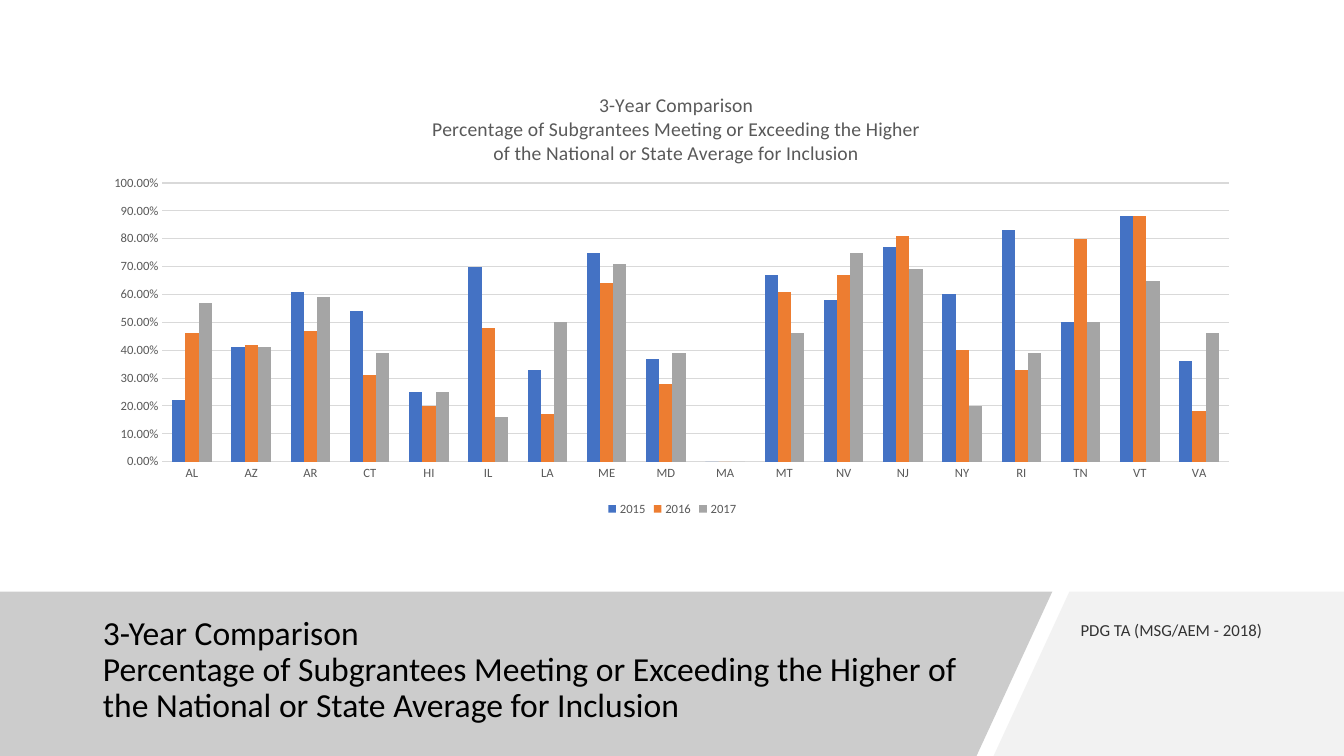
from pptx import Presentation
from pptx import util as u
from pptx.chart.data import CategoryChartData
from pptx.dml.color import RGBColor
from pptx.enum import chart as charts, text
from pptx.oxml import parse_xml
from pptx.oxml.ns import nsdecls, qn

STATES = "AL AZ AR CT HI IL LA ME MD MA MT NV NJ NY RI TN VT VA".split()
YEARS = {
    "2015": ("4472C4", [.22, .41, .61, .54, .25, .7, .33, .75, .37, 0,
                        .67, .58, .77, .6, .83, .5, .88, .36]),
    "2016": ("ED7D31", [.46, .42, .47, .31, .2, .48, .17, .64, .28, 0,
                        .61, .67, .81, .4, .33, .8, .88, .18]),
    "2017": ("A5A5A5", [.57, .41, .59, .39, .25, .16, .5, .71, .39, 0,
                        .46, .75, .69, .2, .39, .5, .65, .46]),
}
CHART_TITLE = ["3-Year Comparison",
               "Percentage of Subgrantees Meeting or Exceeding the Higher",
               "of the National or State Average for Inclusion"]


def color(value):
    return RGBColor.from_string(value)


def place(element, before, inner=False, **fractions):
    """Give a chart part a manual layout, as fractions of the chart."""
    for old in element.findall(qn("c:layout")):
        element.remove(old)
    target = '<c:layoutTarget val="inner"/>' if inner else ""
    modes = "".join(f'<c:{key}Mode val="edge"/>' for key in "xy")
    sizes = "".join(f'<c:{key} val="{val}"/>' for key, val in fractions.items())
    element.insert(before, parse_xml(
        f'<c:layout {nsdecls("c")}><c:manualLayout>{target}{modes}{sizes}'
        '</c:manualLayout></c:layout>'))


class Slide:
    font = "Calibri"
    gray = "595959"

    def __init__(self, deck):
        self.page = deck.slides.add_slide(deck.slide_layouts[5])

    def style(self, font, size, value):
        font.name, font.size, font.bold = self.font, u.Pt(size), False
        font.color.rgb = color(value)

    def fill_text(self, frame, words, size=12, value="000000", align="LEFT",
                  spacing=1.0, after=0):
        frame.word_wrap = True
        frame.auto_size = text.MSO_AUTO_SIZE.NONE
        frame.vertical_anchor = text.MSO_ANCHOR.MIDDLE
        para = frame.paragraphs[0]
        para.alignment = getattr(text.PP_ALIGN, align)
        para.line_spacing, para.space_after = spacing, u.Pt(after)
        for number, line in enumerate(words.split("\n")):
            if number:
                para.add_line_break()
            span = para.add_run()
            span.text = line
            self.style(span.font, size, value)

    def title(self, words, left, top, width, height, **look):
        box = self.page.shapes.title
        box.left, box.top = u.Cm(left), u.Cm(top)
        box.width, box.height = u.Cm(width), u.Cm(height)
        self.fill_text(box.text_frame, words, **look)
        # Bring the title in front of the panels
        self.page.shapes._spTree.append(box._element)

    def label(self, words, left, top, width, height, **look):
        box = self.page.shapes.add_textbox(*map(u.Cm, (left, top, width, height)))
        self.fill_text(box.text_frame, words, **look)

    def polygon(self, points, fill, opacity=100):
        corners = [(u.Cm(x), u.Cm(y)) for x, y in points]
        builder = self.page.shapes.build_freeform(*corners[0])
        builder.add_line_segments(corners[1:], close=True)
        shape = builder.convert_to_shape()
        shape.shadow.inherit = False
        shape.line.fill.background()
        shape.fill.solid()
        shape.fill.fore_color.rgb = color(fill)
        if opacity < 100:
            tint = shape._element.spPr.find(".//" + qn("a:srgbClr"))
            tint.append(parse_xml(
                f'<a:alpha {nsdecls("a")} val="{opacity * 1000}"/>'))

    def columns(self, heading, categories, series, left, top, width, height):
        data = CategoryChartData(number_format="0.00%")
        data.categories = categories
        for name, (_, values) in series.items():
            data.add_series(name, values)
        chart = self.page.shapes.add_chart(
            charts.XL_CHART_TYPE.COLUMN_CLUSTERED,
            *map(u.Cm, (left, top, width, height)), data).chart
        self.style(chart.font, 10, "000000")

        # Columns
        plot = chart.plots[0]
        plot.gap_width, plot.overlap, plot.vary_by_categories = 150, 0, False
        for bars, (fill, _) in zip(plot.series, series.values()):
            bars.format.fill.solid()
            bars.format.fill.fore_color.rgb = color(fill)

        # Axes and gridlines
        for axis in (chart.category_axis, chart.value_axis):
            axis.major_tick_mark = charts.XL_TICK_MARK.NONE
            axis.format.line.fill.background()
            self.style(axis.tick_labels.font, 9, self.gray)
        scale = chart.value_axis
        scale.minimum_scale, scale.maximum_scale, scale.major_unit = 0, 1, .1
        scale.tick_labels.number_format = "0.00%"
        scale.tick_labels.number_format_is_linked = False
        scale.major_gridlines.format.line.color.rgb = color("D9D9D9")
        scale.major_gridlines.format.line.width = u.Pt(.75)

        # Legend and heading
        chart.has_legend = True
        chart.legend.position = charts.XL_LEGEND_POSITION.BOTTOM
        chart.legend.include_in_layout = False
        self.style(chart.legend.font, 9, self.gray)
        frame = chart.chart_title.text_frame
        for number, line in enumerate(heading):
            para = frame.add_paragraph() if number else frame.paragraphs[0]
            span = para.add_run()
            span.text = line
            self.style(span.font, 14, self.gray)
        place(chart.chart_title._element, 1, x=.29, y=.04)
        plot_area = chart._chartSpace.find(".//" + qn("c:plotArea"))
        place(plot_area, 0, inner=True, x=.06, y=.25, w=.92, h=.62)


def main():
    deck = Presentation()
    deck.slide_width, deck.slide_height = u.Cm(33.87), u.Cm(19.05)
    slide = Slide(deck)

    # Footer panels
    top, bottom = 14.91, 19.05
    slide.polygon([(26.95, top), (33.87, top), (33.87, bottom), (25.04, bottom)],
                  "F2F2F2")
    slide.polygon([(0, top), (26.52, top), (24.61, bottom), (0, bottom)],
                  "808080", opacity=40)

    # Title and caption
    slide.title("3-Year Comparison\nPercentage of Subgrantees Meeting or Exceeding "
                "the Higher of the National or State Average for Inclusion",
                2.34, 15.37, 22.43, 3.05, size=24, spacing=.9)
    slide.label("PDG TA (MSG/AEM - 2018)", 26.8, 15.37, 5.26, 1.02,
                value="333333", align="RIGHT", after=6)

    # Chart
    slide.columns(CHART_TITLE, STATES, YEARS, 2.34, 1.78, 29.21, 11.33)

    deck.save("out.pptx")


if __name__ == "__main__":
    main()
